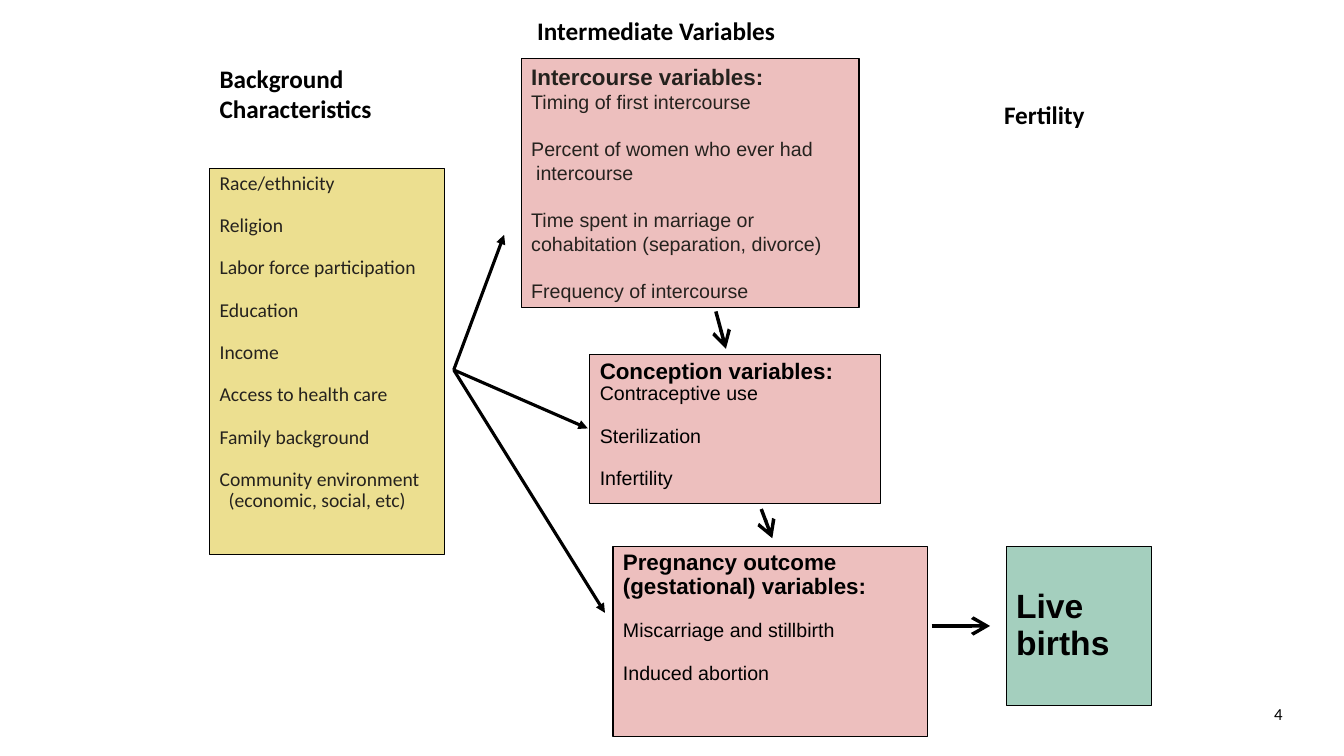
from lxml.etree import SubElement
from pptx import Presentation
from pptx.dml.color import RGBColor
from pptx.enum.shapes import MSO_CONNECTOR, MSO_SHAPE
from pptx.enum.text import MSO_ANCHOR, PP_ALIGN
from pptx.oxml.ns import qn
from pptx.util import Inches, Pt

BLACK = RGBColor(0, 0, 0)
BROWN = RGBColor(0x25, 0x22, 0x1E)
PINK = RGBColor(0xED, 0xBF, 0xBE)
YELLOW = RGBColor(0xEC, 0xDF, 0x90)
GREEN = RGBColor(0xA4, 0xCF, 0xBE)

# Row: text, size, bold, gap above, left indent in inches
BOXES = [
    dict(at=(9.98, 5.42, 1.44, 1.58), fill=GREEN, color=BLACK, font="Arial",
         edge=0.75, pitch=0.9, anchor=MSO_ANCHOR.MIDDLE,
         rows=[("Live births", 24, True, False, 0)]),
    dict(at=(5.17, 0.58, 3.35, 2.47), fill=PINK, color=BROWN, font="Arial",
         edge=0.75, pitch=1.0, anchor=MSO_ANCHOR.TOP,
         rows=[("Intercourse variables:", 16, True, False, 0),
               ("Timing of first intercourse", 14, False, False, 0),
               ("Percent of women who ever had", 14, False, True, 0),
               ("intercourse", 14, False, False, 0.05),
               ("Time spent in marriage or cohabitation (separation, divorce)",
                14, False, True, 0),
               ("Frequency of intercourse", 14, False, True, 0)]),
    dict(at=(2.08, 1.67, 2.33, 3.83), fill=YELLOW, color=BROWN, font="Calibri",
         edge=0.5, pitch=0.9, anchor=MSO_ANCHOR.TOP,
         rows=[("Race/ethnicity", 14, False, False, 0),
               ("Religion", 14, False, True, 0),
               ("Labor force participation", 14, False, True, 0),
               ("Education", 14, False, True, 0),
               ("Income", 14, False, True, 0),
               ("Access to health care", 14, False, True, 0),
               ("Family background", 14, False, True, 0),
               ("Community environment", 14, False, True, 0),
               ("(economic, social, etc)", 14, False, False, 0.09)]),
    dict(at=(6.08, 5.42, 3.12, 1.89), fill=PINK, color=BLACK, font="Arial",
         edge=0.75, pitch=0.9, anchor=MSO_ANCHOR.TOP,
         rows=[("Pregnancy outcome (gestational) variables:", 16, True, False, 0),
               ("Miscarriage and stillbirth", 14, False, True, 0),
               ("Induced abortion", 14, False, True, 0)]),
    dict(at=(5.85, 3.52, 2.88, 1.48), fill=PINK, color=BLACK, font="Arial",
         edge=0.75, pitch=0.9, anchor=MSO_ANCHOR.TOP,
         rows=[("Conception variables:", 16, True, False, 0),
               ("Contraceptive use", 14, False, False, 0),
               ("Sterilization", 14, False, True, 0),
               ("Infertility", 14, False, True, 0)]),
]
HEADS = [
    ((2.08, 0.58, 1.72, 0.71), ["Background", "Characteristics"]),
    ((5.23, 0.1, 2.58, 0.4), ["Intermediate Variables"]),
    ((9.86, 0.94, 1.01, 0.4), ["Fertility"]),
]
FORK = (4.5, 3.67)
TIPS = [(5, 2.33), (6, 6.08), (5.83, 4.25)]
STEPS = [((7.1, 3.09), (7.2, 3.46)),
         ((7.55, 5.05), (7.66, 5.34)),
         ((9.24, 6.21), (9.82, 6.21))]


def inches(nums):
    return [Inches(n) for n in nums]


def style(para, font, size, bold, color):
    para.font.name = font
    para.font.size = Pt(size)
    para.font.bold = bold
    para.font.color.rgb = color


def add_box(shapes, box):
    shape = shapes.add_shape(MSO_SHAPE.RECTANGLE, *inches(box["at"]))
    shape.shadow.inherit = False
    shape.fill.solid()
    shape.fill.fore_color.rgb = box["fill"]
    shape.line.color.rgb = BLACK
    shape.line.width = Pt(box["edge"])
    frame = shape.text_frame
    frame.word_wrap = True
    frame.vertical_anchor = box["anchor"]
    for i, (text, size, bold, gap, indent) in enumerate(box["rows"]):
        para = frame.paragraphs[0] if i == 0 else frame.add_paragraph()
        para.text = text
        para.alignment = PP_ALIGN.LEFT
        para.line_spacing = box["pitch"]
        if gap:
            para.space_before = Pt(round(size * 1.2 * box["pitch"], 1))
        if indent:
            para._p.get_or_add_pPr().set("marL", str(Inches(indent)))
        style(para, box["font"], size, bold, box["color"])


def add_text(shapes, at, lines, size, bold, wrap, align=PP_ALIGN.LEFT):
    frame = shapes.add_textbox(*inches(at)).text_frame
    frame.word_wrap = wrap
    for i, line in enumerate(lines):
        para = frame.paragraphs[0] if i == 0 else frame.add_paragraph()
        para.text = line
        para.alignment = align
        style(para, "Calibri", size, bold, BLACK)
    return frame


def add_arrow(shapes, start, end, width, kind, scale):
    arrow = shapes.add_connector(MSO_CONNECTOR.STRAIGHT,
                                 *inches(start + end))
    arrow.line.color.rgb = BLACK
    arrow.line.width = Pt(width)
    SubElement(arrow.line._get_or_add_ln(), qn("a:tailEnd"),
               type=kind, w=scale, len=scale)
    SubElement(arrow._element.spPr, qn("a:effectLst"))


def main():
    deck = Presentation()
    deck.slide_width, deck.slide_height = inches((13.33, 7.5))
    shapes = deck.slides.add_slide(deck.slide_layouts[6]).shapes
    for start, end in STEPS:
        add_arrow(shapes, start, end, 2.5, "arrow", "lg")
    for box in BOXES:
        add_box(shapes, box)
    for tip in TIPS:
        add_arrow(shapes, FORK, tip, 2.25, "triangle", "med")
    for at, lines in HEADS:
        add_text(shapes, at, lines, 18, True, False)
    number = add_text(shapes, (9.82, 6.88, 3, 0.4), ["4"], 12, False, True,
                      PP_ALIGN.RIGHT)
    number.vertical_anchor = MSO_ANCHOR.MIDDLE
    deck.save("out.pptx")


if __name__ == "__main__":
    main()
